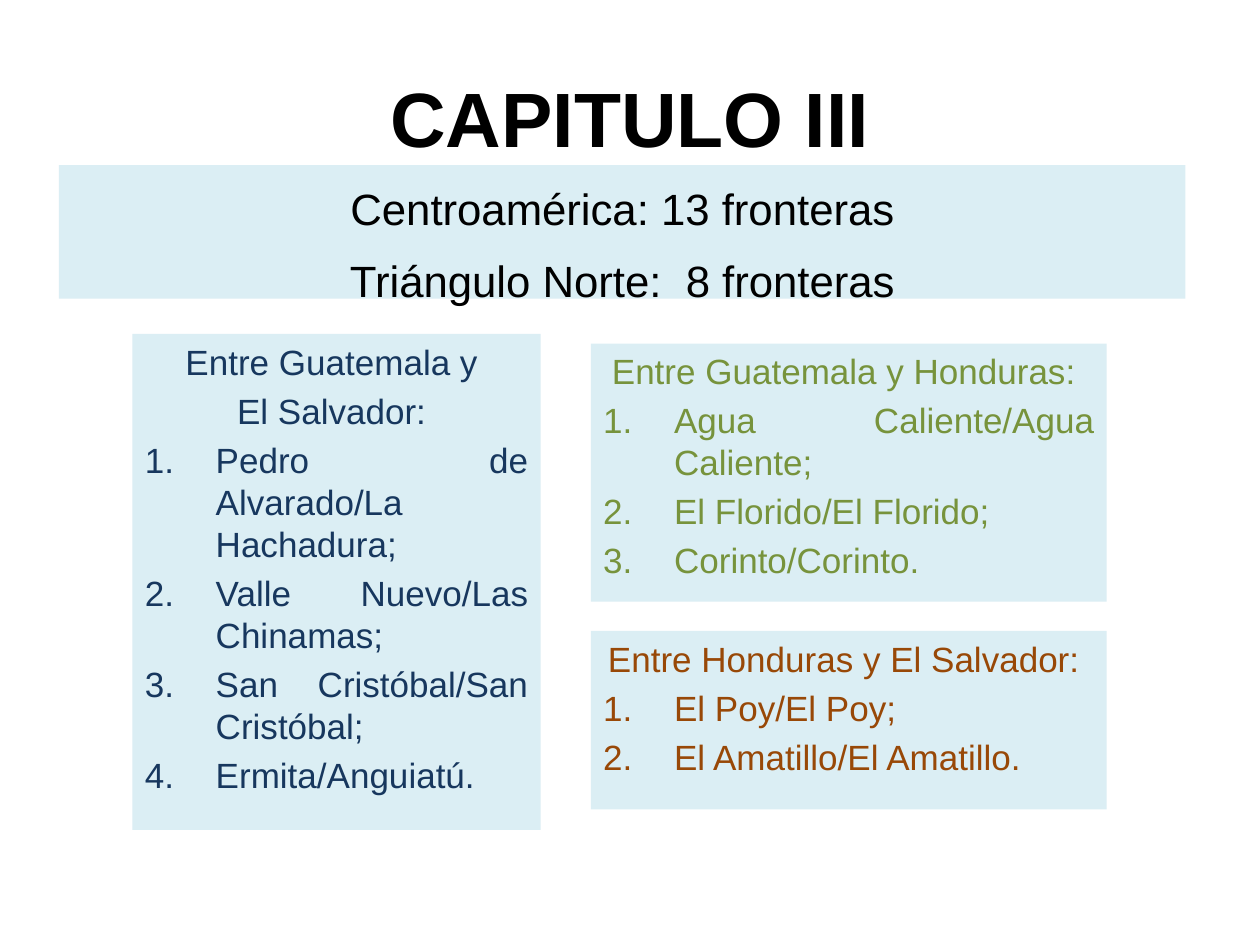
from lxml import etree
from pptx import Presentation
from pptx.dml.color import RGBColor
from pptx.enum import shapes, text
from pptx.oxml import ns
from pptx.util import Cm, Pt

FONT = "Arial"
PANEL_FILL = "DBEEF4"
INDENT = Cm(1.43)

# left, top, width, height in cm; colour; headings; numbered crossings
BORDERS = [
    (11.91, 12.72, 10.4, 3.6, "984807", ["Entre Honduras y El Salvador: "],
     ["El Poy/El Poy; ", "El Amatillo/El Amatillo. "]),
    (11.91, 6.93, 10.4, 5.2, "77933C", ["Entre Guatemala y Honduras: "],
     ["Agua Caliente/Agua Caliente; ", "El Florido/El Florido; ",
      "Corinto/Corinto. "]),
    (2.67, 6.73, 8.23, 10, "17375E", ["Entre Guatemala y ", "El Salvador: "],
     ["Pedro de Alvarado/La Hachadura; ", "Valle Nuevo/Las Chinamas; ",
      "San Cristóbal/San Cristóbal; ", "Ermita/Anguiatú. "]),
]


def rgb(colour):
    return RGBColor.from_string(colour)


def format_paragraph(paragraph, size, colour, alignment, bold=False):
    paragraph.alignment = alignment
    for run in paragraph.runs:
        run.font.name = FONT
        run.font.size = Pt(size)
        run.font.bold = bold
        run.font.color.rgb = rgb(colour)


def number_paragraph(paragraph):
    """Give the paragraph an automatic number and a hanging indent."""
    properties = paragraph._p.get_or_add_pPr()
    properties.set("marL", str(INDENT))
    properties.set("indent", str(-INDENT))
    etree.SubElement(properties, ns.qn("a:buFont"), typeface="+mj-lt")
    etree.SubElement(properties, ns.qn("a:buAutoNum"), type="arabicPeriod")


def add_title(slide, title):
    box = slide.shapes.add_textbox(Cm(1.27), Cm(0.76), Cm(22.86), Cm(3.18))
    frame = box.text_frame
    frame.word_wrap = True
    frame.vertical_anchor = text.MSO_ANCHOR.MIDDLE
    frame.text = title
    format_paragraph(frame.paragraphs[0], 44, "000000",
                     text.PP_ALIGN.CENTER, bold=True)


def add_panel(slide, left, top, width, height, lines):
    """Add a filled rectangle with top-anchored text; return its paragraphs."""
    shape = slide.shapes.add_shape(shapes.MSO_SHAPE.RECTANGLE, Cm(left),
                                   Cm(top), Cm(width), Cm(height))
    shape.shadow.inherit = False
    shape.fill.solid()
    shape.fill.fore_color.rgb = rgb(PANEL_FILL)
    shape.line.fill.background()
    frame = shape.text_frame
    frame.word_wrap = True
    frame.vertical_anchor = text.MSO_ANCHOR.TOP
    frame.text = "\n".join(lines)
    return frame.paragraphs


def add_summary(slide, lines):
    for paragraph in add_panel(slide, 1.19, 3.33, 22.71, 2.69, lines):
        paragraph.line_spacing = 1.2
        paragraph.space_before = Pt(5)
        format_paragraph(paragraph, 25, "000000", text.PP_ALIGN.CENTER)


def add_border(slide, left, top, width, height, colour, headings, crossings):
    paragraphs = add_panel(slide, left, top, width, height,
                           headings + crossings)
    for index, paragraph in enumerate(paragraphs):
        paragraph.space_before = Pt(4)
        if index < len(headings):
            alignment = text.PP_ALIGN.CENTER
        else:
            alignment = text.PP_ALIGN.JUSTIFY
            number_paragraph(paragraph)
        format_paragraph(paragraph, 20, colour, alignment)


def main():
    presentation = Presentation()
    presentation.slide_width, presentation.slide_height = Cm(25.4), Cm(19.05)
    slide = presentation.slides.add_slide(presentation.slide_layouts[6])
    add_title(slide, "CAPITULO III")
    add_summary(slide, ["Centroamérica: 13 fronteras",
                        "Triángulo Norte:  8 fronteras"])
    for border in BORDERS:
        add_border(slide, *border)
    presentation.save("out.pptx")


if __name__ == "__main__":
    main()
